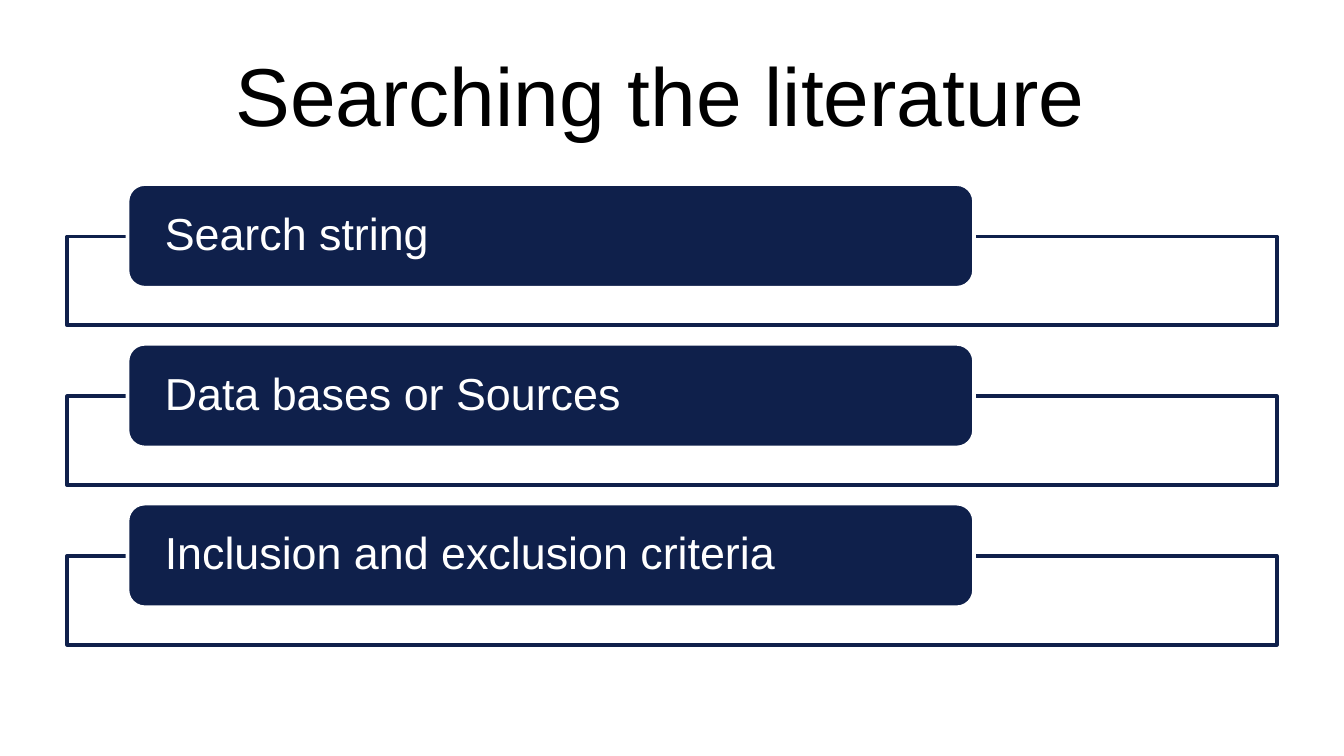
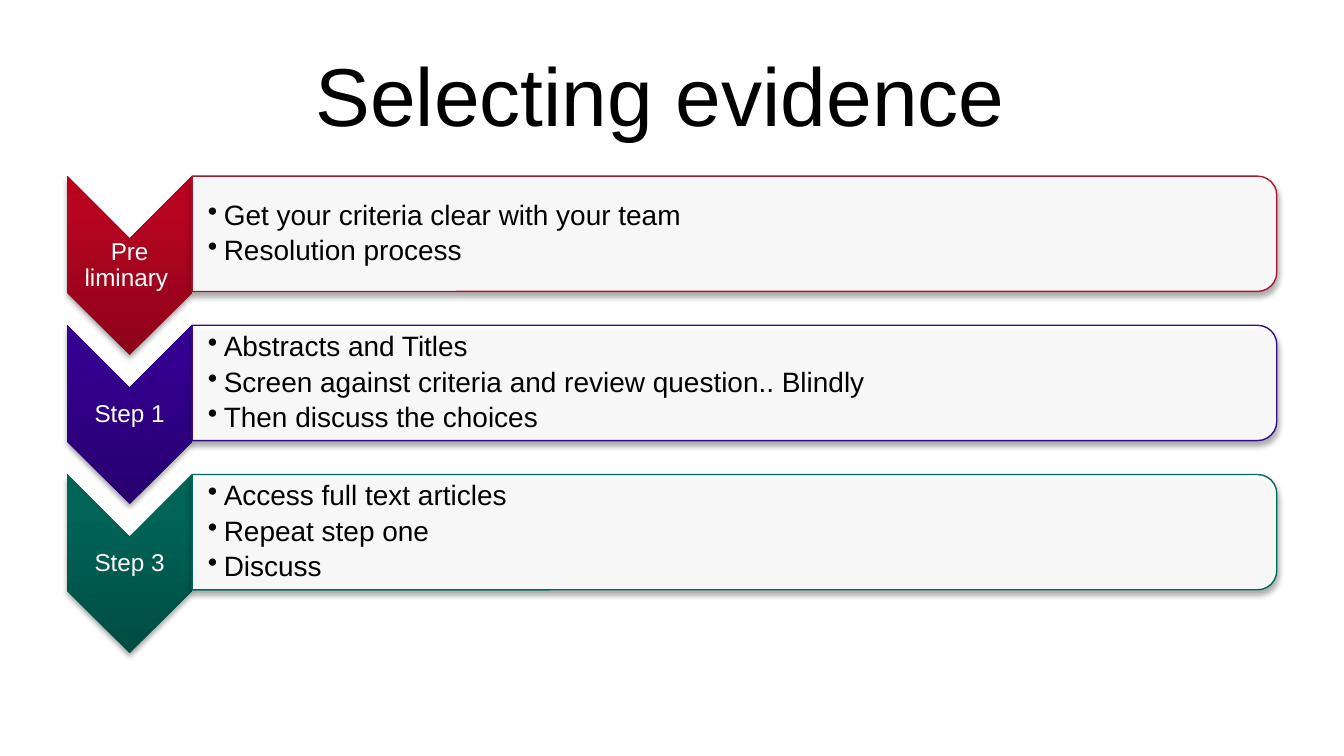
import copy
import dataclasses

import lxml.etree
import pptx
import pptx.dml.color
import pptx.enum.shapes
import pptx.enum.text
import pptx.oxml.ns
import pptx.util

Cm, Pt = pptx.util.Cm, pptx.util.Pt
Shape = pptx.enum.shapes.MSO_SHAPE
Align = pptx.enum.text.PP_ALIGN
qn = pptx.oxml.ns.qn


@dataclasses.dataclass(frozen=True)
class Theme:
    font: str = "Arial"
    ink: str = "000000"
    paper: str = "FFFFFF"
    navy: str = "0F204B"
    # Outline, then the gradient from bottom to top
    red: tuple = ("A71930", "8D0319", "B60421", "BB001E")
    violet: tuple = ("370A8A", "27006E", "33008F", "330090")
    green: tuple = ("00675A", "004D43", "006457", "006458")
    gradient_stops: tuple = (0, 0.8, 1)
    title_size: float = 44
    bar_size: float = 24
    bullet_size: float = 15
    step_size: float = 13


THEME = Theme()

TITLE_BOX = (1.27, 0.58, 22.86, 2.39)
SEARCH_BOX = (1.27, 3.48, 22.86, 8.71)
STEPS_BOX = (1.27, 3.33, 22.86, 9.02)

SEARCH_TOPICS = [
    "Search string",
    "Data bases or Sources",
    "Inclusion and exclusion criteria",
]
SELECTION_STEPS = [
    ("Pre liminary ", THEME.red,
     ["Get your criteria clear with your team", "Resolution process"]),
    ("Step 1", THEME.violet,
     ["Abstracts and Titles",
      "Screen against criteria and review question.. Blindly",
      "Then discuss the choices"]),
    ("Step 3", THEME.green,
     ["Access full text articles", "Repeat step one", "Discuss"]),
]


def rgb(colour):
    return pptx.dml.color.RGBColor.from_string(colour)


def add_box(slide, kind, box, fill=None, alpha=None, line=None, width=0):
    """Preset shape at (left, top, width, height) in centimetres."""
    shape = slide.shapes.add_shape(kind, *map(Cm, box))
    shape.shadow.inherit = False
    if fill:
        shape.fill.solid()
        shape.fill.fore_color.rgb = rgb(fill)
    if alpha:
        colour = shape.fill._xPr.find(qn("a:solidFill"))[0]
        lxml.etree.SubElement(colour, qn("a:alpha"), val=str(alpha * 1000))
    if line:
        shape.line.color.rgb = rgb(line)
        shape.line.width = Pt(width)
    else:
        shape.line.fill.background()
    return shape


def add_upright(slide, kind, box, **style):
    """Shape turned a quarter clockwise so that it covers the given box."""
    left, top, width, height = box
    shift = (width - height) / 2
    shape = add_box(slide, kind, (left + shift, top - shift, height, width), **style)
    shape.rotation = 90
    return shape


def add_soft_shadow(shape):
    effects = shape._element.spPr.find(qn("a:effectLst"))
    shadow = lxml.etree.SubElement(
        effects, qn("a:outerShdw"), blurRad=str(Pt(3.1)), dist=str(Pt(1.8)),
        dir="5400000", rotWithShape="0")
    colour = lxml.etree.SubElement(shadow, qn("a:srgbClr"), val=THEME.ink)
    lxml.etree.SubElement(colour, qn("a:alpha"), val="35000")


def fill_gradient(shape, colours):
    shape.fill.gradient()
    shape.fill.gradient_angle = 90
    gradient = shape._element.spPr.find(qn("a:gradFill"))
    gradient.set("rotWithShape", "0")
    stop_list = gradient.find(qn("a:gsLst"))
    stop_list.append(copy.deepcopy(stop_list[-1]))
    for stop, position, colour in zip(
            shape.fill.gradient_stops, THEME.gradient_stops, colours):
        stop.position = position
        stop.color.rgb = rgb(colour)


def write(holder, lines, size, colour, align=Align.LEFT, margins=None,
          spacing=None, after=0, bullets=False):
    """Fill a text frame; margins are left, top, right, bottom in cm."""
    frame = holder.text_frame
    frame.text = "\n".join(lines)
    frame.word_wrap = True
    frame.vertical_anchor = pptx.enum.text.MSO_ANCHOR.MIDDLE
    if margins:
        (frame.margin_left, frame.margin_top,
         frame.margin_right, frame.margin_bottom) = map(Cm, margins)
    for paragraph in frame.paragraphs:
        paragraph.alignment = align
        if spacing:
            paragraph.line_spacing = spacing
            paragraph.space_after = Pt(after)
        if bullets:
            paragraph.level = 1
            properties = paragraph._p.get_or_add_pPr()
            properties.set("marL", str(Cm(0.3)))
            properties.set("indent", str(-Cm(0.3)))
            lxml.etree.SubElement(properties, qn("a:buChar"), char="•")
        for run in paragraph.runs:
            run.font.name = THEME.font
            run.font.size = Pt(size)
            run.font.color.rgb = rgb(colour)


def add_label(slide, box, lines, size, colour, **style):
    label = slide.shapes.add_textbox(*map(Cm, box))
    write(label, lines, size, colour, **style)


def add_titled_slide(deck, title):
    slide = deck.slides.add_slide(deck.slide_layouts[6])
    add_label(slide, TITLE_BOX, [title], THEME.title_size, THEME.ink,
              align=Align.CENTER)
    return slide


def draw_search_list(slide, box, topics):
    """Open frames, each headed by a solid bar."""
    left, top, width, height = box
    frame_drop, frame_height = 0.99, 1.68
    bar_indent, bar_width, bar_height = 1.14, 16, 1.96
    pitch = (height - frame_drop - frame_height) / (len(topics) - 1)
    for row, topic in enumerate(topics):
        y = top + row * pitch
        # Frame
        add_box(slide, Shape.RECTANGLE, (left, y + frame_drop, width, frame_height),
                fill=THEME.paper, alpha=90, line=THEME.navy, width=2)
        # Bar with the topic
        bar = add_box(slide, Shape.ROUNDED_RECTANGLE,
                      (left + bar_indent, y, bar_width, bar_height),
                      fill=THEME.navy, line=THEME.paper, width=2)
        write(bar, [topic], THEME.bar_size, THEME.paper,
              margins=(0.61, 0, 0.61, 0), spacing=0.9, after=8.4)


def draw_steps(slide, box, steps):
    """Downward chevrons, each with a panel of bullets beside it."""
    left, top, width, height = box
    chevron_width, chevron_height = 2.36, 3.38
    panel_height, panel_inset = 2.18, 0.1
    panel_left, panel_width = left + chevron_width, width - chevron_width
    pitch = (height - chevron_height) / (len(steps) - 1)
    for row, (name, (outline, *gradient), tasks) in enumerate(steps):
        y = top + row * pitch
        # Chevron and step name
        chevron = add_upright(slide, Shape.CHEVRON,
                              (left, y, chevron_width, chevron_height))
        fill_gradient(chevron, gradient)
        add_soft_shadow(chevron)
        notch = chevron_width / 2
        add_label(slide, (left, y + notch, chevron_width, chevron_height - 2 * notch),
                  [name], THEME.step_size, THEME.paper, align=Align.CENTER,
                  margins=(0.02,) * 4, spacing=0.9, after=4.55)
        # Panel and its tasks
        panel = add_upright(slide, Shape.ROUND_2_SAME_RECTANGLE,
                            (panel_left, y, panel_width, panel_height),
                            fill=THEME.paper, alpha=90, line=outline, width=0.75)
        add_soft_shadow(panel)
        add_label(slide, (panel_left, y + panel_inset, panel_width - panel_inset,
                          panel_height - 2 * panel_inset),
                  tasks, THEME.bullet_size, THEME.ink,
                  margins=(0.3, 0.02, 0.02, 0.02), spacing=0.9, after=2.8,
                  bullets=True)


def main():
    deck = pptx.Presentation()
    deck.slide_width, deck.slide_height = Cm(25.4), Cm(14.29)
    searching = add_titled_slide(deck, "Searching the literature ")
    draw_search_list(searching, SEARCH_BOX, SEARCH_TOPICS)
    selecting = add_titled_slide(deck, "Selecting evidence ")
    draw_steps(selecting, STEPS_BOX, SELECTION_STEPS)
    deck.save("out.pptx")


if __name__ == "__main__":
    main()
